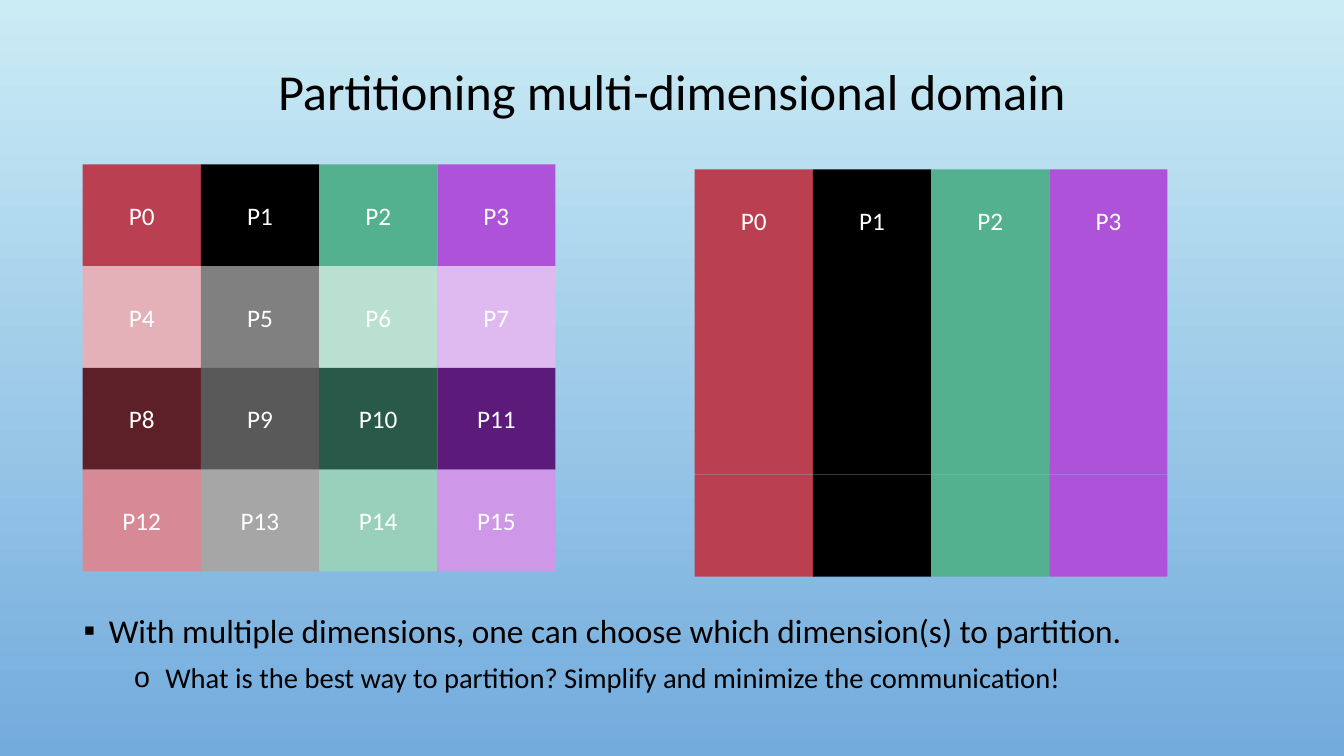
import lxml.etree
import pptx
import pptx.dml.color
import pptx.enum.shapes
import pptx.enum.text
import pptx.oxml.ns
import pptx.util

Inches = pptx.util.Inches
Pt = pptx.util.Pt

FONT = "Calibri"
COLOURS = {
    "sky": "CBECF5", "deep sky": "73ABDD", "text": "000000", "label": "FFFFFF",
    "red": "BA3F51", "black": "000000", "green": "53B18F", "purple": "AE52D9",
    "pale red": "E5B1B9", "mid grey": "808080", "pale green": "BAE0D2", "pale purple": "DFBAF0",
    "dark red": "5D2028", "dark grey": "595959", "dark green": "295948", "dark purple": "5C1B7B",
    "soft red": "D78A95", "light grey": "A6A6A6", "soft green": "98D0BC", "soft purple": "CE97E8",
}
MAIN_ROW = ["red", "black", "green", "purple"]
BLOCK_ROWS = [
    MAIN_ROW,
    ["pale red", "mid grey", "pale green", "pale purple"],
    ["dark red", "dark grey", "dark green", "dark purple"],
    ["soft red", "light grey", "soft green", "soft purple"],
]
COLUMN_ROWS = [MAIN_ROW] * 4

# Boxes: left, top, width, height in inches
TITLE_BOX = (1, 0.32, 11.33, 1.23)
BODY_BOX = (0.73, 5.96, 11.33, 1.23)
BLOCK_BOX = (0.82, 1.63, 4.69, 4.04)
COLUMN_BOX = (6.89, 1.68, 4.69, 4.04)

# Text, bullet, size, left margin, hanging indent, space before
BULLETS = [
    ("With multiple dimensions, one can choose which dimension(s) to partition.",
     "▪", 23.8, 0.25, 0.25, 0),
    ("What is the best way to partition? Simplify and minimize the communication!",
     "o", 20.4, 0.81, 0.31, 5),
]


def rgb(name):
    return pptx.dml.color.RGBColor.from_string(COLOURS[name])


def place(part, box):
    part.left, part.top, part.width, part.height = (Inches(length) for length in box)


def style(paragraph, size, colour):
    for run in paragraph.runs:
        run.font.name = FONT
        run.font.size = Pt(size)
        run.font.color.rgb = rgb(colour)


def paint_background(slide):
    fill = slide.background.fill
    fill.gradient()
    fill.gradient_angle = 270
    for stop, (position, colour) in zip(fill.gradient_stops, [(0, "sky"), (1, "deep sky")]):
        stop.position = position
        stop.color.rgb = rgb(colour)


def add_title(slide, box):
    title = slide.shapes.title
    place(title, box)
    frame = title.text_frame
    frame.text = "Partitioning multi-dimensional domain"
    frame.auto_size = pptx.enum.text.MSO_AUTO_SIZE.NONE
    frame.vertical_anchor = pptx.enum.text.MSO_ANCHOR.MIDDLE
    heading = frame.paragraphs[0]
    heading.alignment = pptx.enum.text.PP_ALIGN.CENTER
    heading.line_spacing = 0.9
    style(heading, 36, "text")


def set_bullet(paragraph, character, margin, hanging):
    properties = paragraph._p.get_or_add_pPr()
    properties.set("marL", str(Inches(margin)))
    properties.set("indent", str(-Inches(hanging)))
    qn = pptx.oxml.ns.qn
    colour = lxml.etree.SubElement(properties, qn("a:buClr"))
    lxml.etree.SubElement(colour, qn("a:srgbClr"), val=COLOURS["text"])
    lxml.etree.SubElement(properties, qn("a:buChar"), char=character)


def add_body(slide, box):
    body = slide.placeholders[1]
    place(body, box)
    frame = body.text_frame
    frame.text = "\n".join(bullet[0] for bullet in BULLETS)
    frame.auto_size = pptx.enum.text.MSO_AUTO_SIZE.NONE
    frame.vertical_anchor = pptx.enum.text.MSO_ANCHOR.TOP
    for level, (paragraph, bullet) in enumerate(zip(frame.paragraphs, BULLETS)):
        _, character, size, margin, hanging, before = bullet
        paragraph.level = level
        set_bullet(paragraph, character, margin, hanging)
        paragraph.alignment = pptx.enum.text.PP_ALIGN.LEFT
        paragraph.line_spacing = 1.1
        paragraph.space_before = Pt(before)
        style(paragraph, size, "text")


def add_domain(slide, box, rows, labelled_rows):
    """Fill the box with a grid of cells, numbering the processes in the first rows."""
    left, top, width, height = box
    cell_height = height / len(rows)
    for row, colours in enumerate(rows):
        cell_width = width / len(colours)
        for column, colour in enumerate(colours):
            cell = slide.shapes.add_shape(
                pptx.enum.shapes.MSO_SHAPE.RECTANGLE,
                Inches(left + column * cell_width), Inches(top + row * cell_height),
                Inches(cell_width), Inches(cell_height))
            cell.shadow.inherit = False
            cell.fill.solid()
            cell.fill.fore_color.rgb = rgb(colour)
            cell.line.fill.background()
            if row < labelled_rows:
                frame = cell.text_frame
                frame.text = f"P{row * len(colours) + column}"
                frame.vertical_anchor = pptx.enum.text.MSO_ANCHOR.MIDDLE
                label = frame.paragraphs[0]
                label.alignment = pptx.enum.text.PP_ALIGN.CENTER
                style(label, 18, "label")


def main():
    presentation = pptx.Presentation()
    presentation.slide_width = Inches(13.33)
    presentation.slide_height = Inches(7.5)
    slide = presentation.slides.add_slide(presentation.slide_layouts[1])
    paint_background(slide)
    add_title(slide, TITLE_BOX)
    add_body(slide, BODY_BOX)
    add_domain(slide, BLOCK_BOX, BLOCK_ROWS, labelled_rows=4)
    add_domain(slide, COLUMN_BOX, COLUMN_ROWS, labelled_rows=1)
    presentation.save("out.pptx")


if __name__ == "__main__":
    main()
